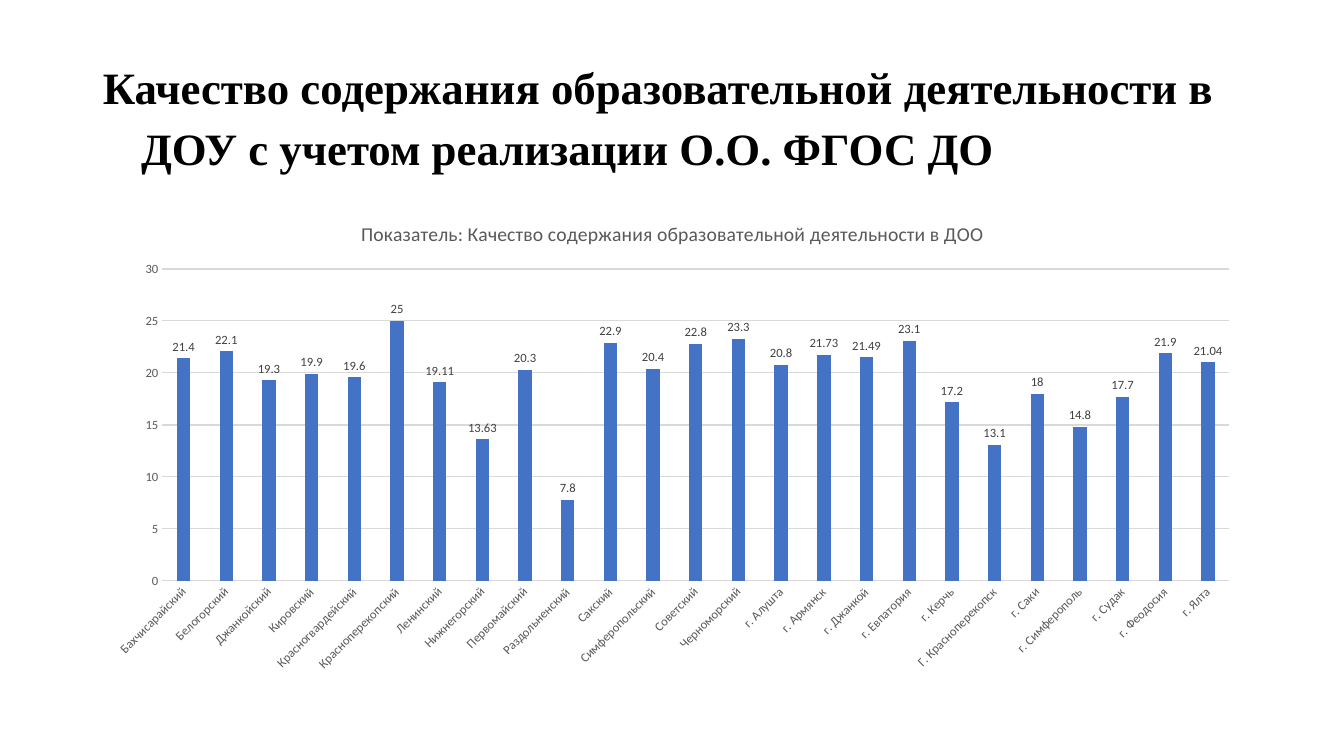
from dataclasses import dataclass

import pptx
import pptx.chart.data
import pptx.dml.color
import pptx.enum.chart
import pptx.enum.text
import pptx.oxml
import pptx.oxml.ns
import pptx.util

SLIDE_WIDTH = pptx.util.Inches(13.33)
SLIDE_HEIGHT = pptx.util.Inches(7.5)
TITLE_ONLY_LAYOUT = 5
TITLE_TEXT = ("Качество содержания образовательной деятельности в ДОУ "
              "с учетом реализации О.О. ФГОС ДО")
CHART_TITLE = "Показатель: Качество содержания образовательной деятельности в ДОО"
GREY_TEXT = "595959"
GREY_LINE = "D9D9D9"


@dataclass(frozen=True)
class Area:
    """A rectangle in shares of the width and height of what holds it."""
    left: float
    top: float
    width: float
    height: float


@dataclass(frozen=True)
class District:
    name: str
    score: float


TITLE_AREA = Area(0.069, 0.053, 0.863, 0.193)
CHART_AREA = Area(0.069, 0.267, 0.863, 0.635)
PLOT_AREA = Area(0.06, 0.14, 0.92, 0.65)

DISTRICTS = [
    District("Бахчисарайский", 21.4),
    District("Белогорский", 22.1),
    District("Джанкойский", 19.3),
    District("Кировский", 19.9),
    District("Красногвардейский", 19.6),
    District("Красноперекопский", 25),
    District("Ленинский", 19.11),
    District("Нижнегорский", 13.63),
    District("Первомайский", 20.3),
    District("Раздольненский", 7.8),
    District("Сакский", 22.9),
    District("Симферопольский", 20.4),
    District("Советский", 22.8),
    District("Черноморский", 23.3),
    District("г. Алушта", 20.8),
    District("г. Армянск", 21.73),
    District("г. Джанкой", 21.49),
    District("г. Евпатория", 23.1),
    District("г. Керчь", 17.2),
    District("Г. Красноперекопск", 13.1),
    District("г. Саки", 18),
    District("г. Симферополь", 14.8),
    District("г. Судак", 17.7),
    District("г. Феодосия", 21.9),
    District("г. Ялта", 21.04),
]


def color(value: str) -> pptx.dml.color.RGBColor:
    return pptx.dml.color.RGBColor.from_string(value)


def style_font(font, size: float, fill: str, name: str = "Calibri", bold: bool = False) -> None:
    font.name = name
    font.size = pptx.util.Pt(size)
    font.bold = bold
    font.color.rgb = color(fill)


def style_line(line, fill: str, width: float = 0.75) -> None:
    line.color.rgb = color(fill)
    line.width = pptx.util.Pt(width)


def on_slide(area: Area) -> tuple[int, int, int, int]:
    return (round(area.left * SLIDE_WIDTH), round(area.top * SLIDE_HEIGHT),
            round(area.width * SLIDE_WIDTH), round(area.height * SLIDE_HEIGHT))


def add_title(slide) -> None:
    title = slide.shapes.title
    title.left, title.top, title.width, title.height = on_slide(TITLE_AREA)
    frame = title.text_frame
    frame.text = TITLE_TEXT
    frame.word_wrap = True
    frame.auto_size = pptx.enum.text.MSO_AUTO_SIZE.NONE
    frame.vertical_anchor = pptx.enum.text.MSO_ANCHOR.MIDDLE
    para = frame.paragraphs[0]
    para.alignment = pptx.enum.text.PP_ALIGN.LEFT
    para.line_spacing = 1.15
    style_font(para.font, 32, "000000", "Times New Roman", bold=True)
    hanging = pptx.util.Inches(0.38)
    properties = para._p.get_or_add_pPr()
    properties.set("marL", str(hanging))
    properties.set("indent", str(-hanging))


def place_plot(chart, area: Area) -> None:
    """Fix the inner plot area, given in shares of the chart."""
    plot_area = chart._chartSpace.chart.plotArea
    for layout in plot_area.findall(pptx.oxml.ns.qn("c:layout")):
        plot_area.remove(layout)
    plot_area.insert(0, pptx.oxml.parse_xml(
        f'<c:layout {pptx.oxml.ns.nsdecls("c")}><c:manualLayout>'
        '<c:layoutTarget val="inner"/><c:xMode val="edge"/><c:yMode val="edge"/>'
        f'<c:x val="{area.left}"/><c:y val="{area.top}"/>'
        f'<c:w val="{area.width}"/><c:h val="{area.height}"/>'
        '</c:manualLayout></c:layout>'))


def style_axes(chart) -> None:
    for axis in (chart.category_axis, chart.value_axis):
        axis.major_tick_mark = pptx.enum.chart.XL_TICK_MARK.NONE
        axis.minor_tick_mark = pptx.enum.chart.XL_TICK_MARK.NONE
        style_font(axis.tick_labels.font, 9, GREY_TEXT)
    style_line(chart.category_axis.format.line, GREY_LINE)
    label_body = chart.category_axis._element.txPr.find(pptx.oxml.ns.qn("a:bodyPr"))
    label_body.set("rot", str(-45 * 60000))
    label_body.set("vert", "horz")
    values = chart.value_axis
    values.minimum_scale, values.maximum_scale, values.major_unit = 0, 30, 5
    values.format.line.fill.background()
    values.has_major_gridlines = True
    style_line(values.major_gridlines.format.line, GREY_LINE)


def style_columns(plot) -> None:
    plot.gap_width = 219
    plot.overlap = -27
    plot.vary_by_categories = False
    series = plot.series[0]
    series.invert_if_negative = False
    series.format.fill.solid()
    series.format.fill.fore_color.rgb = color("4472C4")
    labels = series.data_labels
    labels.show_value = True
    labels.position = pptx.enum.chart.XL_LABEL_POSITION.OUTSIDE_END
    style_font(labels.font, 9, "404040")


def add_score_chart(slide) -> None:
    data = pptx.chart.data.CategoryChartData()
    data.categories = [district.name for district in DISTRICTS]
    data.add_series("Series 1", [district.score for district in DISTRICTS])
    chart = slide.shapes.add_chart(
        pptx.enum.chart.XL_CHART_TYPE.COLUMN_CLUSTERED, *on_slide(CHART_AREA), data).chart
    style_font(chart.font, 10, "000000")
    chart.has_legend = False
    chart.has_title = True
    chart.chart_title.include_in_layout = False
    heading = chart.chart_title.text_frame
    heading.text = CHART_TITLE
    style_font(heading.paragraphs[0].font, 14, GREY_TEXT)
    place_plot(chart, PLOT_AREA)
    style_axes(chart)
    style_columns(chart.plots[0])


def main() -> None:
    deck = pptx.Presentation()
    deck.slide_width, deck.slide_height = SLIDE_WIDTH, SLIDE_HEIGHT
    slide = deck.slides.add_slide(deck.slide_layouts[TITLE_ONLY_LAYOUT])
    add_title(slide)
    add_score_chart(slide)
    deck.save("out.pptx")


if __name__ == "__main__":
    main()
